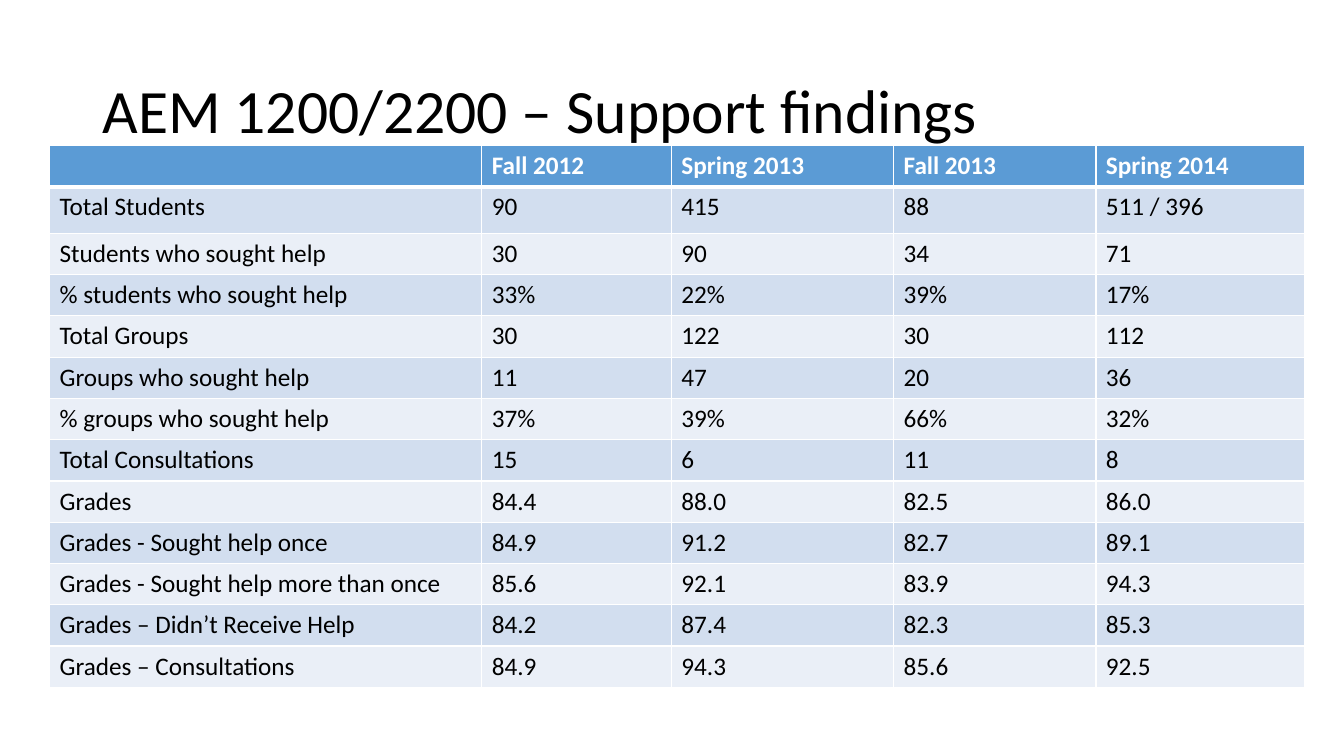
from typing import NamedTuple, Optional

from lxml import etree
from pptx import Presentation
from pptx import util as u
from pptx.dml import color
from pptx.enum import text
from pptx.oxml import ns

FONT = "Calibri"
BLACK, WHITE = "000000", "FFFFFF"
HEADER_FILL = "5B9BD5"
BAND_FILLS = ("D2DEEF", "EAEFF7")
COLUMN_WIDTHS = (10.89, 4.78, 5.6, 5.1, 5.27)
ROW_HEIGHT, TOTAL_ROW_HEIGHT = 1.04, 1.17


class Row(NamedTuple):
    label: str
    fall_2012: str
    spring_2013: str
    fall_2013: str
    spring_2014: str


HEADER = Row("", "Fall 2012", "Spring 2013", "Fall 2013", "Spring 2014")
FINDINGS = (
    Row("Total Students", "90", "415", "88", "511 / 396"),
    Row("Students who sought help", "30", "90", "34", "71"),
    Row("% students who sought help", "33%", "22%", "39%", "17%"),
    Row("Total Groups", "30", "122", "30", "112"),
    Row("Groups who sought help", "11", "47", "20", "36"),
    Row("% groups who sought help", "37%", "39%", "66%", "32%"),
    Row("Total Consultations", "15", "6", "11", "8"),
    Row("Grades", "84.4", "88.0", "82.5", "86.0"),
    Row("Grades - Sought help once", "84.9", "91.2", "82.7", "89.1"),
    Row("Grades - Sought help more than once", "85.6", "92.1", "83.9", "94.3"),
    Row("Grades – Didn’t Receive Help", "84.2", "87.4", "82.3", "85.3"),
    Row("Grades – Consultations", "84.9", "94.3", "85.6", "92.5"),
)


def rgb(value: str) -> color.RGBColor:
    return color.RGBColor.from_string(value)


def write(tf, content: str, *, size: float = 18, fill: str = BLACK,
          bold: bool = False, spacing: Optional[float] = None) -> None:
    p = tf.paragraphs[0]
    p.alignment = text.PP_ALIGN.LEFT
    p.line_spacing = spacing
    r = p.add_run()
    r.text = content
    r.font.name, r.font.size, r.font.bold = FONT, u.Pt(size), bold
    r.font.color.rgb = rgb(fill)


def add_borders(cell, **widths: float) -> None:
    """Draw white cell borders, with a width in points for each side."""
    tc_pr = cell._tc.get_or_add_tcPr()
    for side, width in widths.items():
        ln = etree.SubElement(tc_pr, ns.qn(f"a:ln{side}"), w=str(u.Pt(width)))
        solid = etree.SubElement(ln, ns.qn("a:solidFill"))
        etree.SubElement(solid, ns.qn("a:srgbClr"), val=WHITE)


def fill_row(table, index: int, row: Row) -> None:
    is_header = index == 0
    fill = HEADER_FILL if is_header else BAND_FILLS[(index - 1) % 2]
    for cell, content in zip(table.rows[index].cells, row):
        add_borders(cell, L=1, R=1, T=3 if index == 1 else 1, B=3 if is_header else 1)
        cell.fill.solid()
        cell.fill.fore_color.rgb = rgb(fill)
        if content:
            write(cell.text_frame, content, bold=is_header,
                  fill=WHITE if is_header else BLACK)


def main() -> None:
    prs = Presentation()
    prs.slide_width, prs.slide_height = u.Cm(33.87), u.Cm(19.05)
    s = prs.slides.add_slide(prs.slide_layouts[5])

    # Title
    title = s.shapes.title
    title.left, title.top = u.Cm(2.33), u.Cm(1.01)
    title.width, title.height = u.Cm(29.21), u.Cm(3.68)
    title.text_frame.vertical_anchor = text.MSO_ANCHOR.MIDDLE
    write(title.text_frame, "AEM 1200/2200 – Support findings", size=44, spacing=0.9)

    # Findings table
    rows = (HEADER, *FINDINGS)
    heights = [ROW_HEIGHT] * len(rows)
    heights[1] = TOTAL_ROW_HEIGHT
    table = s.shapes.add_table(
        len(rows), len(COLUMN_WIDTHS), u.Cm(1.25), u.Cm(3.67),
        u.Cm(sum(COLUMN_WIDTHS)), u.Cm(sum(heights))).table
    for column, width in zip(table.columns, COLUMN_WIDTHS):
        column.width = u.Cm(width)
    for index, (row, height) in enumerate(zip(rows, heights)):
        table.rows[index].height = u.Cm(height)
        fill_row(table, index, row)

    prs.save("out.pptx")


if __name__ == "__main__":
    main()
